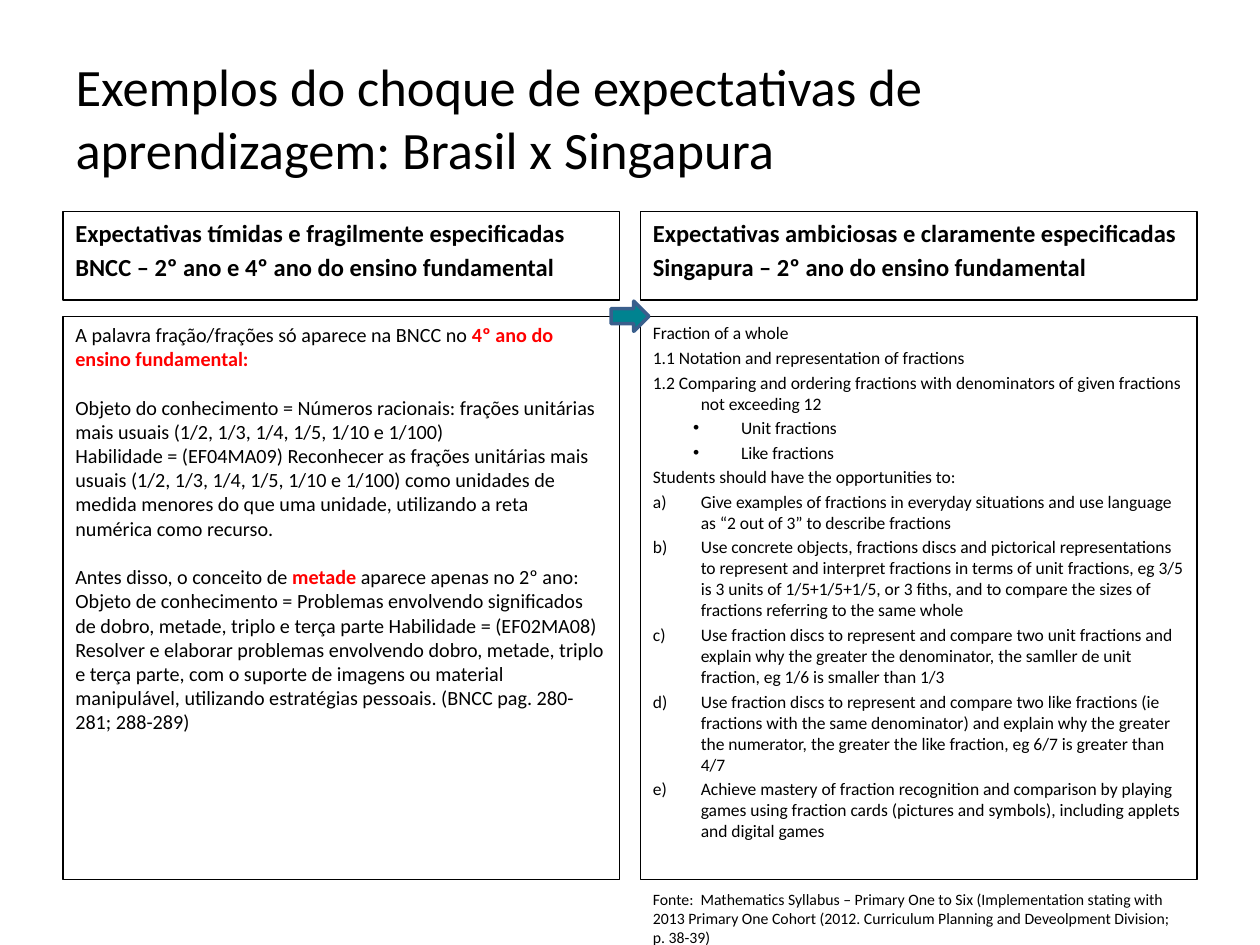
from lxml import etree
from pptx import Presentation
from pptx.dml.color import RGBColor
from pptx.enum import shapes, text
from pptx.oxml import ns
from pptx.util import Pt

FONT = "Calibri"
COLORS = {"ink": "000000", "alert": "FF0000", "arrow": "008390", "arrow_line": "3A5F8C"}
MARGIN, GAP, COL_W = 36, 12, 318
HEAD_Y, HEAD_H = 121, 50.4
BODY_Y, BODY_H = 180.7, 321.8
HANG = 27.4

COLUMN_HEADS = [
    ["Expectativas tímidas e fragilmente especificadas",
     "BNCC – 2º ano e 4º ano do ensino fundamental"],
    ["Expectativas ambiciosas e claramente especificadas",
     "Singapura – 2º ano do ensino fundamental"],
]

# Each paragraph: (starts a new block, [(text, highlighted), ...])
BRAZIL = [
    (False, [("A palavra fração/frações só aparece na BNCC no ", False),
             ("4º ano do ensino fundamental:", True)]),
    (True, [("Objeto do conhecimento = Números racionais: frações unitárias mais usuais "
             "(1/2, 1/3, 1/4, 1/5, 1/10 e 1/100)", False)]),
    (False, [("Habilidade = (EF04MA09) Reconhecer as frações unitárias mais usuais "
              "(1/2, 1/3, 1/4, 1/5, 1/10 e 1/100) como unidades de medida menores do que "
              "uma unidade, utilizando a reta numérica como recurso.", False)]),
    (True, [("Antes disso, o conceito de ", False), ("metade", True),
            (" aparece apenas no 2º ano:", False)]),
    (False, [("Objeto de conhecimento = Problemas envolvendo significados de dobro, metade, "
              "triplo e terça parte Habilidade = (EF02MA08) Resolver e elaborar problemas "
              "envolvendo dobro, metade, triplo e terça parte, com o suporte de imagens ou "
              "material manipulável, utilizando estratégias pessoais. "
              "(BNCC pag. 280-281; 288-289)", False)]),
]

# Each paragraph: (kind, text)
SINGAPORE = [
    ("plain", "Fraction of a whole"),
    ("plain", "1.1 Notation and representation of fractions"),
    ("plain", "1.2 Comparing and ordering fractions with denominators of given fractions "
              "not exceeding 12"),
    ("bullet", "Unit fractions"),
    ("bullet", "Like fractions"),
    ("plain", "Students should have the opportunities to:"),
    ("letter", "Give examples of fractions in everyday situations and use language as "
               "“2 out of 3” to describe fractions"),
    ("letter", "Use concrete objects, fractions discs and pictorical representations to "
               "represent and interpret fractions in terms of unit fractions, eg 3/5 is 3 "
               "units of 1/5+1/5+1/5, or 3 fiths, and to compare the sizes of fractions "
               "referring to the same whole"),
    ("letter", "Use fraction discs to represent and compare two unit fractions and explain "
               "why the greater the denominator, the samller de unit fraction, eg 1/6 is "
               "smaller than 1/3"),
    ("letter", "Use fraction discs to represent and compare two like fractions (ie fractions "
               "with the same denominator) and explain why the greater the numerator, the "
               "greater the like fraction, eg 6/7 is greater than 4/7"),
    ("letter", "Achieve mastery of fraction recognition and comparison by playing games using "
               "fraction cards (pictures and symbols), including applets and digital games"),
]

SOURCE = ("Fonte:  Mathematics Syllabus – Primary One to Six (Implementation stating with "
          "2013 Primary One Cohort (2012. Curriculum Planning and Deveolpment Division; "
          "p. 38-39)")


def rgb(name):
    return RGBColor.from_string(COLORS[name])


def add_run(p, words, size, color="ink", bold=False):
    r = p.add_run()
    r.text = words
    r.font.name, r.font.size, r.font.bold = FONT, Pt(size), bold
    r.font.color.rgb = rgb(color)


def next_paragraph(tf, index, space):
    """Return paragraph number index; all but the first get space before."""
    if index == 0:
        return tf.paragraphs[0]
    p = tf.add_paragraph()
    p.space_before = Pt(space)
    return p


def set_hanging(p, kind):
    pPr = p._p.get_or_add_pPr()
    left = 50.4 if kind == "bullet" else HANG
    pPr.set("marL", str(Pt(left)))
    pPr.set("indent", str(Pt(-HANG)))
    if kind == "bullet":
        p.level = 1
        etree.SubElement(pPr, ns.qn("a:buFont"), typeface="Arial")
        etree.SubElement(pPr, ns.qn("a:buChar"), char="•")
    elif kind == "letter":
        etree.SubElement(pPr, ns.qn("a:buAutoNum"), type="alphaLcParenR")


def add_box(s, x, y, w, h, outlined=True):
    sp = s.shapes.add_textbox(Pt(x), Pt(y), Pt(w), Pt(h))
    sp.text_frame.word_wrap = True
    if outlined:
        sp.line.color.rgb = rgb("ink")
        sp.line.width = Pt(0.75)
    return sp.text_frame


def add_title(s, x, y, w, h):
    sp = s.shapes.title
    sp.left, sp.top, sp.width, sp.height = Pt(x), Pt(y), Pt(w), Pt(h)
    tf = sp.text_frame
    tf.auto_size = text.MSO_AUTO_SIZE.NONE
    tf.vertical_anchor = text.MSO_ANCHOR.MIDDLE
    p = tf.paragraphs[0]
    p.alignment = text.PP_ALIGN.LEFT
    add_run(p, "Exemplos do choque de expectativas de aprendizagem: Brasil x Singapura", 30)


def add_head(s, x, y, w, h, lines):
    tf = add_box(s, x, y, w, h)
    for i, line in enumerate(lines):
        add_run(next_paragraph(tf, i, 2.8), line, 14, bold=True)


def add_brazil(s, x, y, w, h):
    tf = add_box(s, x, y, w, h)
    for i, (new_block, runs) in enumerate(BRAZIL):
        p = next_paragraph(tf, i, 14 if new_block else 0)
        for words, marked in runs:
            add_run(p, words, 11.5, "alert" if marked else "ink", marked)


def add_singapore(s, x, y, w, h):
    tf = add_box(s, x, y, w, h)
    for i, (kind, words) in enumerate(SINGAPORE):
        p = next_paragraph(tf, i, 2)
        set_hanging(p, kind)
        add_run(p, words, 10)


def add_source(s, x, y, w, h):
    tf = add_box(s, x, y, w, h, outlined=False)
    add_run(tf.paragraphs[0], SOURCE, 9)


def add_arrow(s, center_x, center_y, w, h):
    sp = s.shapes.add_shape(shapes.MSO_SHAPE.RIGHT_ARROW, Pt(center_x - w / 2),
                            Pt(center_y - h / 2), Pt(w), Pt(h))
    sp.shadow.inherit = False
    sp.fill.solid()
    sp.fill.fore_color.rgb = rgb("arrow")
    sp.line.color.rgb = rgb("arrow_line")
    sp.line.width = Pt(2)


def main():
    prs = Presentation()
    prs.slide_width, prs.slide_height = Pt(720), Pt(540)
    s = prs.slides.add_slide(prs.slide_layouts[5])
    left, right = MARGIN, MARGIN + COL_W + GAP

    add_title(s, MARGIN, 21.6, 2 * COL_W + GAP, 90)
    for x, lines in zip((left, right), COLUMN_HEADS):
        add_head(s, x, HEAD_Y, COL_W, HEAD_H, lines)
    add_brazil(s, left, BODY_Y, COL_W, BODY_H)
    add_singapore(s, right, BODY_Y, COL_W, BODY_H)
    add_source(s, right, 504.7, COL_W, 40.3)
    add_arrow(s, right - GAP / 2, BODY_Y, 21.6, 17.3)
    prs.save("out.pptx")


if __name__ == "__main__":
    main()
